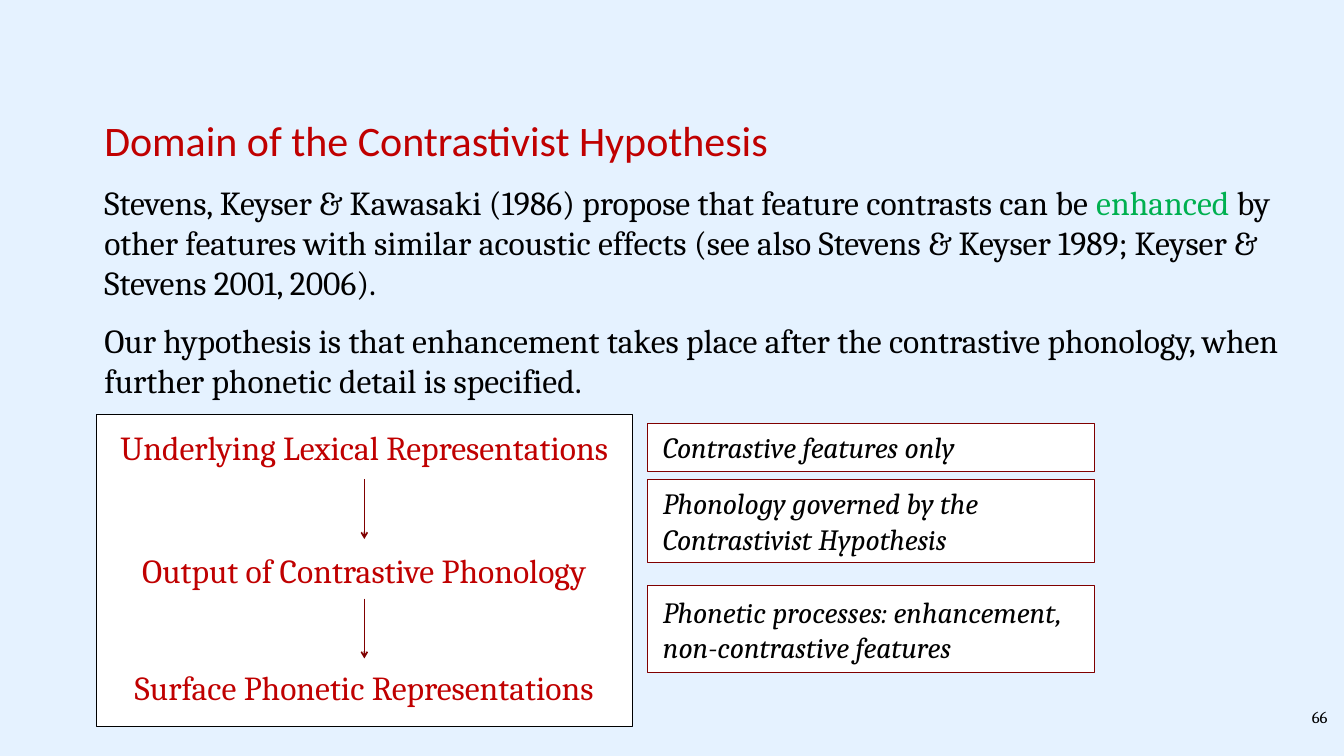
from dataclasses import dataclass

from lxml import etree
from pptx import Presentation
from pptx.dml.color import RGBColor
from pptx.enum.shapes import MSO_CONNECTOR, MSO_SHAPE
from pptx.enum.text import MSO_ANCHOR, MSO_AUTO_SIZE, PP_ALIGN
from pptx.oxml.ns import qn
from pptx.util import Inches, Pt


@dataclass(frozen=True)
class Theme:
    background: str = "E5F2FF"
    panel: str = "FFFFFF"
    ink: str = "000000"
    accent: str = "C00000"
    outline: str = "800000"
    highlight: str = "00B050"
    heading_font: str = "Calibri"
    text_font: str = "Cambria"
    title_size: int = 40
    text_size: int = 32
    note_size: int = 28
    number_size: int = 16


theme = Theme()


def write(shape, lines, size, font=theme.text_font, align=PP_ALIGN.LEFT, italic=False):
    """Fill a shape with lines, each a list of (text, colour) runs."""
    frame = shape.text_frame
    for index, line in enumerate(lines):
        paragraph = frame.paragraphs[0] if index == 0 else frame.add_paragraph()
        paragraph.alignment = align
        paragraph.space_before = Pt(0)
        for text, color in line:
            run = paragraph.add_run()
            run.text = text
            run.font.name = font
            run.font.size = Pt(size)
            run.font.italic = italic
            run.font.color.rgb = RGBColor.from_string(color)


def add_panel(left, top, width, height, line_color):
    panel = slide.shapes.add_shape(
        MSO_SHAPE.RECTANGLE, Inches(left), Inches(top), Inches(width), Inches(height))
    panel.shadow.inherit = False
    panel.fill.solid()
    panel.fill.fore_color.rgb = RGBColor.from_string(theme.panel)
    panel.line.color.rgb = RGBColor.from_string(line_color)
    panel.line.width = Pt(0.75)
    return panel


presentation = Presentation()
presentation.slide_width = Inches(17.78)
presentation.slide_height = Inches(10)
slide = presentation.slides.add_slide(presentation.slide_layouts[3])
slide.background.fill.solid()
slide.background.fill.fore_color.rgb = RGBColor.from_string(theme.background)

# Title and the two statements
title, proposal, hypothesis = slide.placeholders
for block, top, width, height in (
    (title, 1.46, 9.75, 0.77),
    (proposal, 2.35, 15.75, 1.72),
    (hypothesis, 4.18, 15.75, 1.18),
):
    block.left, block.top = Inches(1.28), Inches(top)
    block.width, block.height = Inches(width), Inches(height)
    block.text_frame.word_wrap = True
    block.text_frame.auto_size = MSO_AUTO_SIZE.SHAPE_TO_FIT_TEXT
    block.text_frame.vertical_anchor = MSO_ANCHOR.TOP

write(title, [[("Domain of the Contrastivist Hypothesis", theme.accent)]],
      theme.title_size, theme.heading_font)
write(proposal, [[
    ("Stevens, Keyser & Kawasaki (1986) propose that feature contrasts can be ", theme.ink),
    ("enhanced", theme.highlight),
    (" by other features with similar acoustic effects (see also Stevens & Keyser 1989; "
     "Keyser & Stevens 2001, 2006).", theme.ink),
]], theme.text_size)
write(hypothesis, [[
    ("Our hypothesis is that enhancement takes place after the contrastive phonology, "
     "when further phonetic detail is specified.", theme.ink),
]], theme.text_size)

# Statements carry no bullet
for statement in (proposal, hypothesis):
    properties = statement.text_frame.paragraphs[0]._p.get_or_add_pPr()
    properties.set("marL", "0")
    properties.set("indent", "0")
    etree.SubElement(properties, qn("a:buNone"))

# Derivation panel with its three levels
add_panel(1.28, 5.48, 7.09, 4.13, theme.ink)
for level, left, top, width in (
    ("Underlying Lexical Representations", 1.32, 5.6, 7),
    ("Output of Contrastive Phonology", 1.6, 7.23, 6.44),
    ("Surface Phonetic Representations", 1.5, 8.77, 6.64),
):
    label = slide.shapes.add_textbox(
        Inches(left), Inches(top), Inches(width), Inches(0.64))
    label.text_frame.word_wrap = False
    label.text_frame.auto_size = MSO_AUTO_SIZE.SHAPE_TO_FIT_TEXT
    write(label, [[(level, theme.accent)]], theme.text_size, align=PP_ALIGN.CENTER)

# Arrows between the levels
for start in (6.34, 7.92):
    arrow = slide.shapes.add_connector(
        MSO_CONNECTOR.STRAIGHT,
        Inches(4.82), Inches(start), Inches(4.82), Inches(start + 0.79))
    arrow.line.color.rgb = RGBColor.from_string(theme.outline)
    arrow.line.width = Pt(1.5)
    etree.SubElement(arrow.line._get_or_add_ln(), qn("a:tailEnd"), type="arrow")
    etree.SubElement(arrow._element.spPr, qn("a:effectLst"))

# Notes beside the levels
for top, height, lines in (
    (5.6, 0.63, ["Contrastive features only"]),
    (6.34, 1.1, ["Phonology governed by the", "Contrastivist Hypothesis"]),
    (7.75, 1.14, ["Phonetic processes: enhancement,", "non-contrastive features"]),
):
    note = add_panel(8.57, top, 5.91, height, theme.outline)
    frame = note.text_frame
    frame.word_wrap = True
    frame.auto_size = MSO_AUTO_SIZE.SHAPE_TO_FIT_TEXT
    frame.vertical_anchor = MSO_ANCHOR.MIDDLE
    frame.margin_left, frame.margin_right = Inches(0.2), Inches(0)
    frame.margin_top = frame.margin_bottom = Inches(0.08)
    write(note, [[(line, theme.ink)] for line in lines], theme.note_size, italic=True)

# Slide number
number = slide.shapes.add_textbox(Inches(15.58), Inches(9.3), Inches(2.08), Inches(0.5))
number.text_frame.word_wrap = True
write(number, [[("66", theme.ink)]], theme.number_size, align=PP_ALIGN.RIGHT)

presentation.save("out.pptx")
